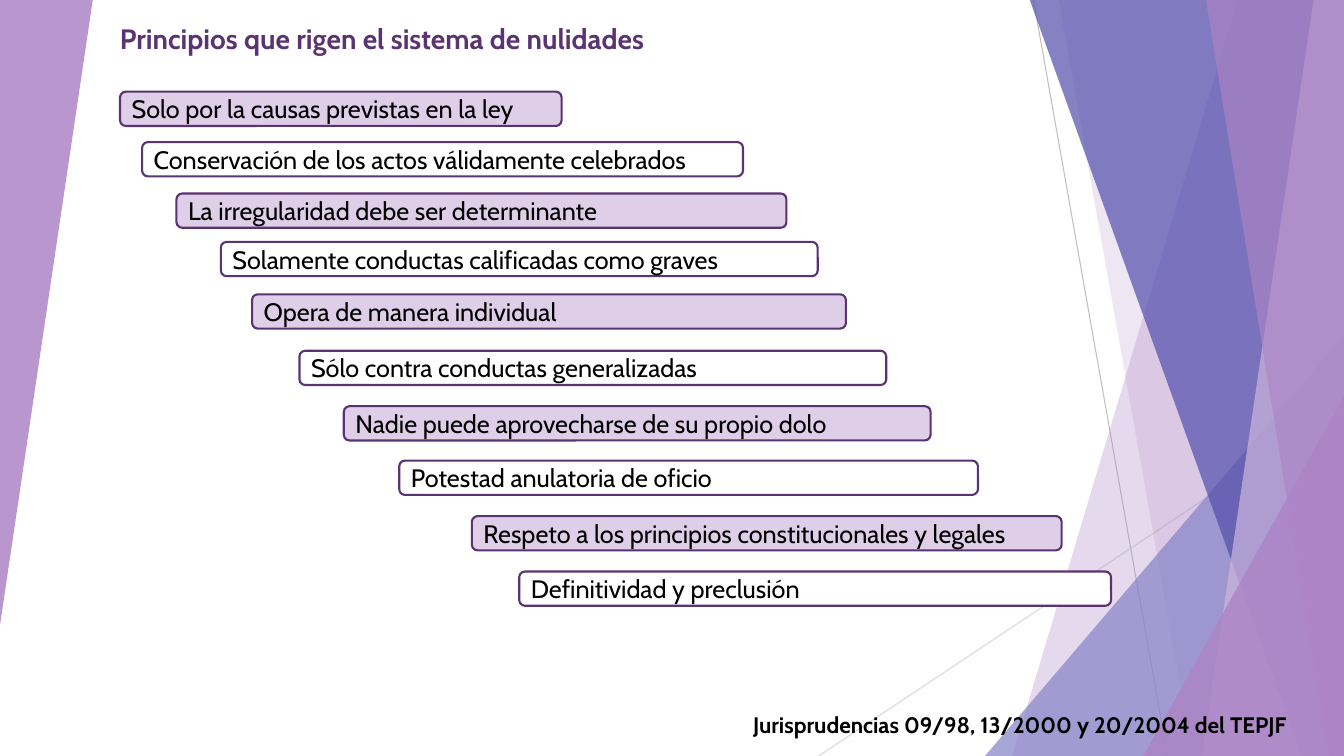
from lxml import etree
from pptx import Presentation
from pptx.dml.color import RGBColor
from pptx.enum.shapes import MSO_CONNECTOR, MSO_SHAPE
from pptx.enum.text import MSO_ANCHOR, PP_ALIGN
from pptx.oxml.ns import qn
from pptx.util import Inches, Pt

LINE = MSO_CONNECTOR.STRAIGHT
ROUND = MSO_SHAPE.ROUNDED_RECTANGLE
WEDGE = MSO_SHAPE.ISOSCELES_TRIANGLE
MIDDLE = MSO_ANCHOR.MIDDLE
JUSTIFY = PP_ALIGN.JUSTIFY

WIDE, HIGH = 13.33, 7.5
TOP = -0.01
BAR_HIGH = 0.34
FONT = "Cabin"
COLORS = {
    "purple": "AD84C6",
    "lilac": "CEB5DD",
    "blue": "8784C7",
    "indigo": "524EAB",
    "dark": "5A3471",
    "pale": "DECEE8",
    "white": "FFFFFF",
    "black": "000000",
    "gray": "BFBFBF",
    "silver": "D9D9D9",
}

# Left, top, width and wording of each step
STEPS = [
    (1.19, 0.91, 4.38, "Solo por la causas previstas en la ley"),
    (1.41, 1.41, 5.96, "Conservación de los actos válidamente celebrados"),
    (1.75, 1.92, 6.05, "La irregularidad debe ser determinante"),
    (2.19, 2.40, 5.92, "Solamente conductas calificadas como graves"),
    (2.50, 2.92, 5.89, "Opera de manera individual"),
    (2.97, 3.48, 5.82, "Sólo contra conductas generalizadas"),
    (3.41, 4.03, 5.82, "Nadie puede aprovecharse de su propio dolo"),
    (3.96, 4.57, 5.74, "Potestad anulatoria de oficio"),
    (4.68, 5.12, 5.85, "Respeto a los principios constitucionales y legales"),
    (5.15, 5.67, 5.87, "Definitividad y preclusión"),
]


def rgb(name):
    return RGBColor.from_string(COLORS[name])


def paint(shape, color, alpha):
    """Fill without outline; alpha is a percentage."""
    shape.shadow.inherit = False
    shape.line.fill.background()
    shape.fill.solid()
    shape.fill.fore_color.rgb = rgb(color)
    tone = shape.fill._xPr.find(qn("a:solidFill"))[0]
    etree.SubElement(tone, qn("a:alpha"), val=str(alpha * 1000))


def add_line(slide, start, end, color):
    points = [Inches(n) for n in start + end]
    line = slide.shapes.add_connector(LINE, *points)
    line.line.color.rgb = rgb(color)
    line.line.width = Pt(0.75)
    etree.SubElement(line._element.spPr, qn("a:effectLst"))


def add_band(slide, upper, lower, color, alpha):
    """Band from a slanted left edge to the right edge of the slide."""
    points = [(upper, TOP), (WIDE, TOP), (WIDE, HIGH), (lower, HIGH)]
    points = [(Inches(x), Inches(y)) for x, y in points]
    path = slide.shapes.build_freeform(*points[0])
    path.add_line_segments(points[1:], close=True)
    paint(path.convert_to_shape(), color, alpha)


def add_wedge(slide, box, color, alpha, turn=0):
    wedge = slide.shapes.add_shape(WEDGE, *[Inches(n) for n in box])
    wedge.adjustments[0] = 1
    wedge.rotation = turn
    paint(wedge, color, alpha)


def set_text(frame, text, size, color, bold=False):
    frame.word_wrap = True
    par = frame.paragraphs[0]
    par.text = text
    par.font.name = FONT
    par.font.size = Pt(size)
    par.font.bold = bold
    par.font.color.rgb = rgb(color)
    return par


def add_label(slide, box, text, size, color):
    label = slide.shapes.add_textbox(*[Inches(n) for n in box])
    set_text(label.text_frame, text, size, color, bold=True)


def add_step(slide, left, top, width, text, fill):
    box = [Inches(n) for n in (left, top, width, BAR_HIGH)]
    bar = slide.shapes.add_shape(ROUND, *box)
    bar.shadow.inherit = False
    bar.fill.solid()
    bar.fill.fore_color.rgb = rgb(fill)
    bar.line.color.rgb = rgb("dark")
    bar.line.width = Pt(1.5)
    bar.text_frame.vertical_anchor = MIDDLE
    set_text(bar.text_frame, text, 18, "black").alignment = JUSTIFY


def add_decor(slide):
    add_line(slide, (10.25, 0), (11.58, HIGH), "gray")
    add_line(slide, (WIDE, 4.03), (8.12, HIGH), "silver")
    add_band(slide, 12.28, 10.04, "purple", 30)
    add_band(slide, 10.5, 11.83, "purple", 20)
    add_wedge(slide, (9.77, 3.33, 3.56, 4.17), "blue", 72)
    add_band(slide, 10.21, 12.91, "indigo", 70)
    add_band(slide, 13.03, 11.92, "lilac", 70)
    add_band(slide, 11.96, 13.18, "purple", 65)
    add_wedge(slide, (11.34, 3.93, 1.99, 3.57), "purple", 80)
    add_wedge(slide, (0, 0, 0.92, 6.2), "purple", 85, turn=180)


def main():
    deck = Presentation()
    deck.slide_width = Inches(WIDE)
    deck.slide_height = Inches(HIGH)
    slide = deck.slides.add_slide(deck.slide_layouts[6])

    # Slanted backdrop
    add_decor(slide)

    # Title
    add_label(slide, (1.09, 0.16, 6.36, 0.44),
              "Principios que rigen el sistema de nulidades", 20, "dark")

    # Staircase of principles, in alternating fills
    for i, step in enumerate(STEPS):
        add_step(slide, *step, fill=("pale", "white")[i % 2])

    # Case law
    add_label(slide, (7.37, 7.01, 5.88, 0.37),
              "Jurisprudencias 09/98, 13/2000 y 20/2004 del TEPJF", 16, "black")

    deck.save("out.pptx")


if __name__ == "__main__":
    main()
